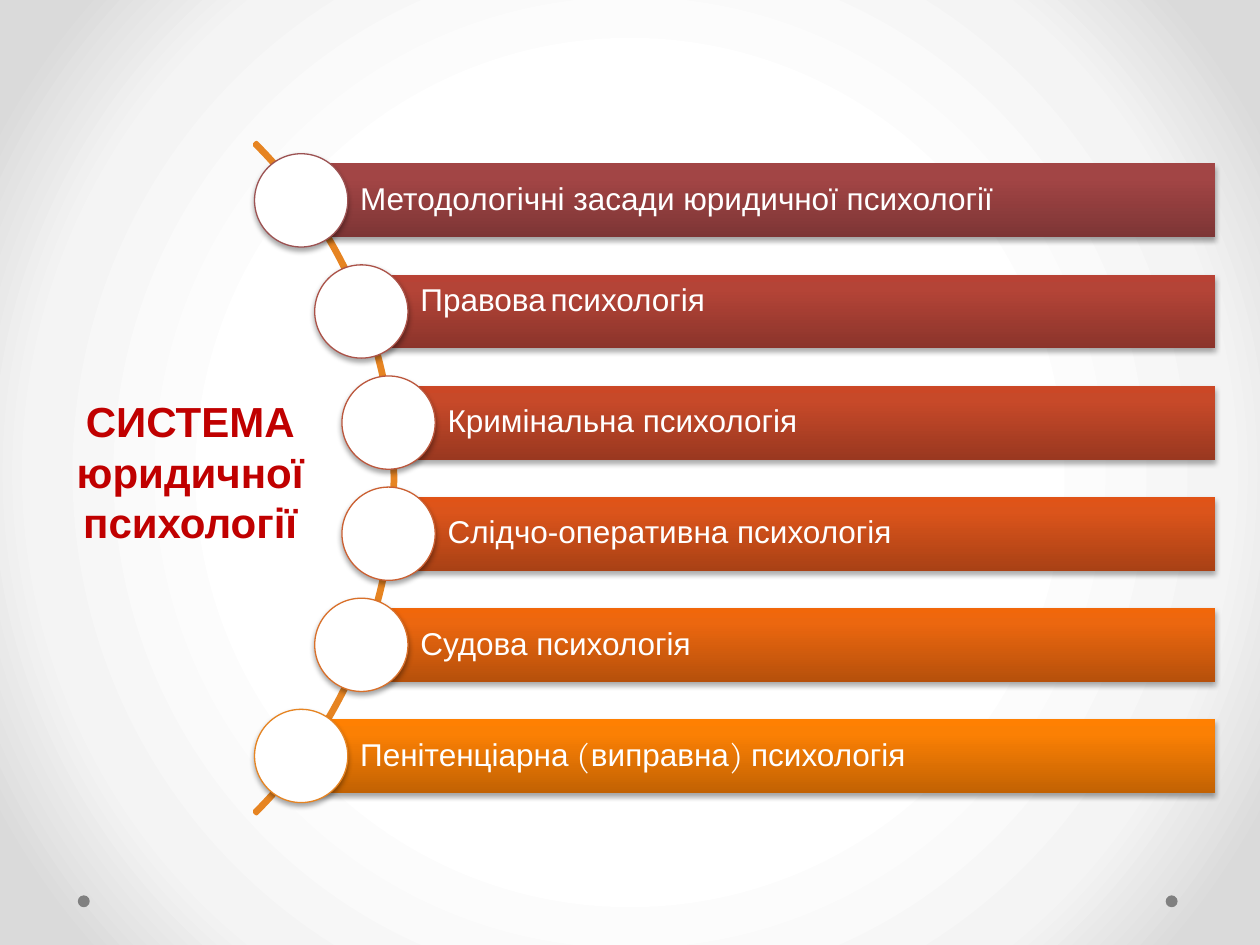
from math import sqrt

from lxml import etree
from pptx import Presentation
from pptx.dml.color import RGBColor
from pptx.enum.shapes import MSO_SHAPE
from pptx.enum.text import MSO_ANCHOR, MSO_AUTO_SIZE, PP_ALIGN
from pptx.oxml.ns import qn
from pptx.util import Cm, Pt

RECT, OVAL, ARC = MSO_SHAPE.RECTANGLE, MSO_SHAPE.OVAL, MSO_SHAPE.BLOCK_ARC
TOP, MIDDLE = MSO_ANCHOR.TOP, MSO_ANCHOR.MIDDLE
CENTER, LEFT = PP_ALIGN.CENTER, PP_ALIGN.LEFT
FIT_SHAPE = MSO_AUTO_SIZE.SHAPE_TO_FIT_TEXT

WHITE = RGBColor(0xFF, 0xFF, 0xFF)
BLACK = RGBColor(0x00, 0x00, 0x00)
GRAY = RGBColor(0x80, 0x80, 0x80)
ORANGE = RGBColor(0xE6, 0x84, 0x22)
RED = RGBColor(0xC0, 0x00, 0x00)
BACKDROP = [(50, WHITE), (76, RGBColor(0xF4, 0xF4, 0xF4)),
            (92, RGBColor(0xDA, 0xDA, 0xDA))]

SANS, SERIF = "Arial", "TeX Gyre Pagella"

# Geometry in centimetres: the nodes sit on a circle around (ARC_X, ARC_Y)
ARC_X, ARC_Y, ARC_RADIUS, NODE_RADIUS = -1.59, 9.64, 9.56, 9.49
PITCH, BAR_HEIGHT, BAR_RIGHT, NODE_SIZE = 2.24, 1.49, 24.49, 1.88

# Branch: runs as (text, font, size), bottom inset,
# bar colours from bottom to top, node outline
BRANCHES = [
    ([("Методологічні засади юридичної психології", SANS, 18)], 0.13,
     ("7D3535", "A24545", "A44343"), "9C5252"),
    ([("Правова", SANS, 18), (" ", SERIF, 11), ("психологія", SANS, 18)], 0.53,
     ("8B342B", "B44437", "B84235"), "AB5248"),
    ([("Кримінальна психологія", SANS, 18)], 0.13,
     ("9A3820", "C74929", "CB4726"), "BB573D"),
    ([("Слідчо-оперативна психологія", SANS, 18)], 0.13,
     ("A94115", "DB541B", "E05317"), "CB6032"),
    ([("Судова психологія", SANS, 18)], 0.13,
     ("B6500B", "EC670F", "F1670A"), "D9702A"),
    ([("Пенітенціарна", SANS, 18), (" (", SERIF, 18), ("виправна", SANS, 18),
      (") ", SERIF, 18), ("психологія", SANS, 18)], 0.13,
     ("C26203", "FB8004", "FF8002"), "E68422"),
]


def add_node(parent, tag, **attributes):
    node = etree.SubElement(parent, qn(tag))
    for key, value in attributes.items():
        node.set(key, str(value))
    return node


class SlideBuilder:
    def __init__(self, slide):
        self.slide = slide

    def gradient(self, owner, fill, stops, radial=False):
        fill.gradient()
        grad = owner.find(".//" + qn("a:gradFill"))
        for child in list(grad):
            grad.remove(child)
        stop_list = add_node(grad, "a:gsLst")
        for position, color in stops:
            stop = add_node(stop_list, "a:gs", pos=position * 1000)
            add_node(stop, "a:srgbClr", val=color)
        if radial:
            route = add_node(grad, "a:path", path="circle")
            add_node(route, "a:fillToRect", l=50000, t=50000, r=50000, b=50000)
        else:
            add_node(grad, "a:lin", ang=16200000, scaled=0)

    def background(self, stops):
        self.gradient(self.slide.element, self.slide.background.fill, stops, True)

    def shape(self, kind, left, top, width, height, fill=None, line=None,
              weight=0.75, shadow=False):
        shape = self.slide.shapes.add_shape(
            kind, Cm(left), Cm(top), Cm(width), Cm(height))
        shape.shadow.inherit = False
        if fill is None:
            shape.fill.background()
        else:
            shape.fill.solid()
            shape.fill.fore_color.rgb = fill
        if line is None:
            shape.line.fill.background()
        else:
            shape.line.color.rgb = line
            shape.line.width = Pt(weight)
        if shadow:
            effects = shape.element.spPr.find(qn("a:effectLst"))
            outer = add_node(effects, "a:outerShdw", blurRad=Pt(3.1), dist=Pt(1.8),
                             dir=5400000, rotWithShape=0)
            add_node(add_node(outer, "a:srgbClr", val=BLACK), "a:alpha", val=35000)
        return shape

    def arc(self):
        arc = self.shape(ARC, ARC_X - ARC_RADIUS, ARC_Y - ARC_RADIUS,
                         2 * ARC_RADIUS, 2 * ARC_RADIUS, line=ORANGE, weight=2.25)
        for index, value in enumerate((189, 27, 0.003)):
            arc.adjustments[index] = value

    def bar(self, left, middle, runs, bottom_inset, colors):
        bar = self.shape(RECT, left, middle - BAR_HEIGHT / 2,
                         BAR_RIGHT - left, BAR_HEIGHT, shadow=True)
        self.gradient(bar.element.spPr, bar.fill,
                      zip((0, 80, 100), map(RGBColor.from_string, colors)))
        frame = bar.text_frame
        frame.word_wrap = True
        frame.vertical_anchor = MIDDLE
        frame.margin_left = Cm(1.19)
        frame.margin_top = frame.margin_right = Cm(0.13)
        frame.margin_bottom = Cm(bottom_inset)
        label = frame.paragraphs[0]
        label.alignment = LEFT
        label.line_spacing = 0.9
        label.font.color.rgb = WHITE
        for text, font, size in runs:
            run = label.add_run()
            run.text = text
            run.font.name = font
            run.font.size = Pt(size)
            run.font.color.rgb = WHITE

    def node(self, x, y, outline):
        self.shape(OVAL, x - NODE_SIZE / 2, y - NODE_SIZE / 2, NODE_SIZE, NODE_SIZE,
                   WHITE, RGBColor.from_string(outline), shadow=True)

    def title(self, text, left, top, width, height):
        title = self.slide.shapes.title
        title.left, title.top = Cm(left), Cm(top)
        title.width, title.height = Cm(width), Cm(height)
        frame = title.text_frame
        frame.text = text
        frame.word_wrap = False
        frame.auto_size = FIT_SHAPE
        frame.vertical_anchor = TOP
        for paragraph in frame.paragraphs:
            paragraph.alignment = CENTER
            paragraph.font.name = SANS
            paragraph.font.size = Pt(24)
            paragraph.font.bold = True
            paragraph.font.color.rgb = RED


def main():
    deck = Presentation()
    deck.slide_width, deck.slide_height = Cm(25.4), Cm(19.05)
    title_only = deck.slide_layouts[5]
    builder = SlideBuilder(deck.slides.add_slide(title_only))

    # Backdrop with the two footer dots
    builder.background(BACKDROP)
    for dot_left in (1.57, 23.5):
        builder.shape(OVAL, dot_left, 18.05, 0.24, 0.24, GRAY)

    # Branches along the arc
    builder.arc()
    for index, (runs, bottom_inset, colors, outline) in enumerate(BRANCHES):
        offset = (index - (len(BRANCHES) - 1) / 2) * PITCH
        x = ARC_X + sqrt(NODE_RADIUS ** 2 - offset ** 2)
        y = ARC_Y + offset
        builder.bar(x, y, runs, bottom_inset, colors)
        builder.node(x, y, outline)

    # Topic to the left of the arc
    builder.title("СИСТЕМА\nюридичної\nпсихології", 1.27, 7.85, 5.13, 3.33)

    deck.save("out.pptx")


if __name__ == "__main__":
    main()
